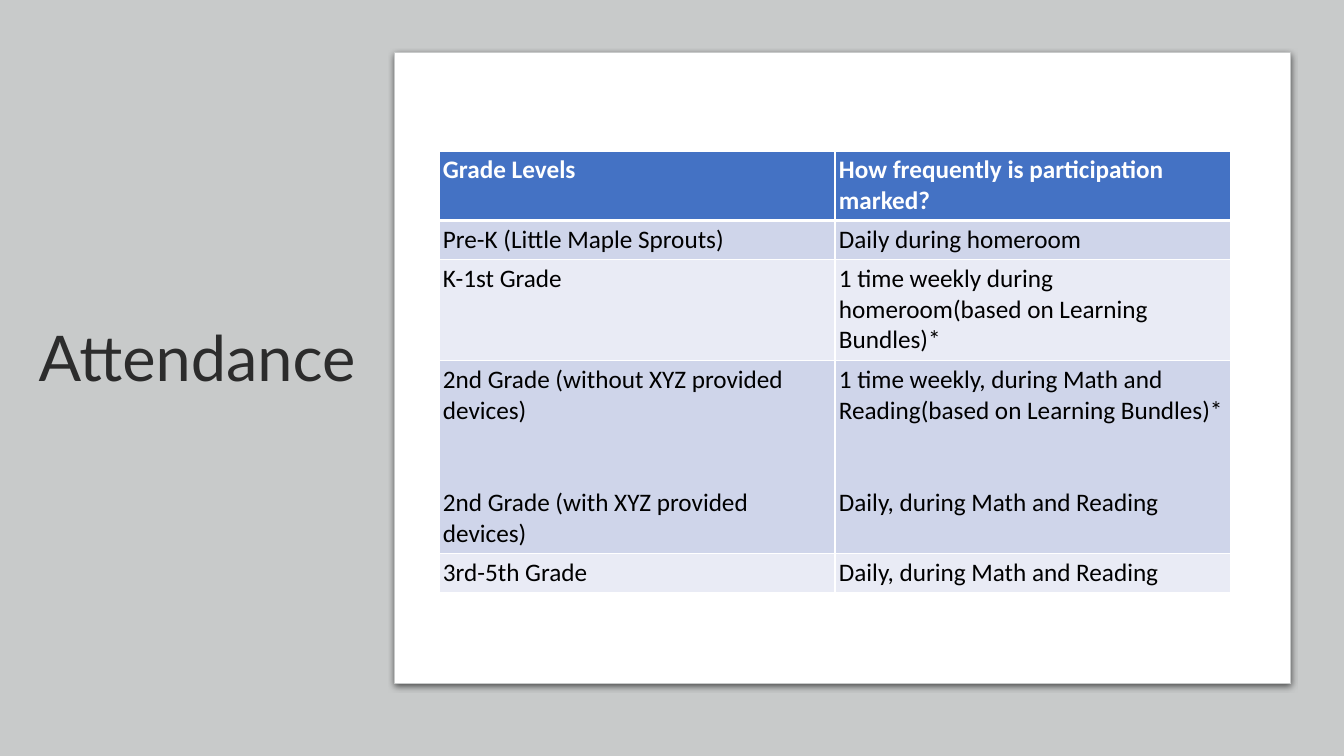
from dataclasses import dataclass

from lxml import etree
from pptx import Presentation
from pptx.dml.color import RGBColor
from pptx.enum.shapes import MSO_SHAPE
from pptx.enum.text import MSO_ANCHOR, MSO_AUTO_SIZE, PP_ALIGN
from pptx.oxml.ns import qn
from pptx.shapes.autoshape import Shape
from pptx.slide import Slide
from pptx.table import _Cell
from pptx.util import Emu, Pt

RECTANGLE, ROUNDED = MSO_SHAPE.RECTANGLE, MSO_SHAPE.ROUNDED_RECTANGLE
MIDDLE, CENTER, NO_AUTOFIT = MSO_ANCHOR.MIDDLE, PP_ALIGN.CENTER, MSO_AUTO_SIZE.NONE
TITLE_ONLY = 5
PX_PER_INCH = 100.8


@dataclass(frozen=True)
class Theme:
    background: str = "E7E6E6"
    backdrop: str = "C8CACA"
    panel: str = "FFFFFF"
    title: str = "2C2C2C"
    header: str = "4472C4"
    header_text: str = "FFFFFF"
    body_text: str = "000000"
    border: str = "FFFFFF"
    bands: tuple[str, str] = ("CFD5EA", "E9EBF5")
    title_font: str = "Lato"
    table_font: str = "Calibri"
    title_size: int = 45
    table_size: int = 18
    group_gap: int = 44
    thin_border: int = 1
    header_border: int = 3


@dataclass(frozen=True)
class Box:
    left: int
    top: int
    width: int
    height: int

    def emu(self) -> tuple[Emu, Emu, Emu, Emu]:
        return px(self.left), px(self.top), px(self.width), px(self.height)


@dataclass(frozen=True)
class AttendanceRow:
    """Each column holds one or more paragraphs."""
    height: int
    grades: tuple[str, ...]
    frequency: tuple[str, ...]


THEME = Theme()
SLIDE_BOX = Box(0, 0, 1344, 756)
TITLE_BOX = Box(0, 71, 394, 580)
PANEL_BOX = Box(395, 53, 896, 631)
TABLE_BOX = Box(439, 151, 792, 441)
CELL_MARGIN = 4

ROWS = (
    AttendanceRow(69, ("Grade Levels",), ("How frequently is participation marked?",)),
    AttendanceRow(39, ("Pre-K (Little Maple Sprouts)",), ("Daily during homeroom",)),
    AttendanceRow(101, ("K-1st Grade",),
                  ("1 time weekly during homeroom(based on Learning Bundles)*",)),
    AttendanceRow(193,
                  ("2nd Grade (without XYZ provided devices)",
                   "2nd Grade (with XYZ provided devices)"),
                  ("1 time weekly, during Math and Reading(based on Learning Bundles)*",
                   "Daily, during Math and Reading")),
    AttendanceRow(39, ("3rd-5th Grade",), ("Daily, during Math and Reading",)),
)


def px(length: int) -> Emu:
    return Emu(round(length * 914400 / PX_PER_INCH))


def color(value: str) -> RGBColor:
    return RGBColor.from_string(value)


def add_block(slide: Slide, kind: MSO_SHAPE, box: Box, fill: str) -> Shape:
    shape = slide.shapes.add_shape(kind, *box.emu())
    shape.shadow.inherit = False
    shape.fill.solid()
    shape.fill.fore_color.rgb = color(fill)
    shape.line.fill.background()
    return shape


def add_drop_shadow(shape: Shape) -> None:
    effects = shape.element.spPr.find(qn("a:effectLst"))
    shadow = etree.SubElement(effects, qn("a:outerShdw"), blurRad=str(Pt(4.5)),
                              dist=str(Pt(1.5)), dir="5400000", algn="t", rotWithShape="0")
    black = etree.SubElement(shadow, qn("a:srgbClr"), val="000000")
    etree.SubElement(black, qn("a:alpha"), val="63000")


def add_panel(slide: Slide) -> None:
    panel = add_block(slide, ROUNDED, PANEL_BOX, THEME.panel)
    panel.adjustments[0] = 0
    panel.line.color.rgb = color(THEME.backdrop)
    panel.line.width = Pt(0.75)
    add_drop_shadow(panel)


def format_title(title: Shape, text: str) -> None:
    title.left, title.top, title.width, title.height = TITLE_BOX.emu()
    frame = title.text_frame
    frame.text = text
    frame.word_wrap = True
    frame.auto_size = NO_AUTOFIT
    frame.vertical_anchor = MIDDLE
    paragraph = frame.paragraphs[0]
    paragraph.alignment = CENTER
    paragraph.line_spacing = 0.9
    paragraph.font.name = THEME.title_font
    paragraph.font.size = Pt(THEME.title_size)
    paragraph.font.color.rgb = color(THEME.title)


def set_borders(cell: _Cell, row_index: int) -> None:
    """Rule the cell thinly, with a thick line below the header row."""
    thick_side = {0: "B", 1: "T"}.get(row_index)
    properties = cell._tc.get_or_add_tcPr()
    for side in "LRTB":
        width = THEME.header_border if side == thick_side else THEME.thin_border
        line = etree.SubElement(properties, qn(f"a:ln{side}"), w=str(Pt(width)))
        fill = etree.SubElement(line, qn("a:solidFill"))
        etree.SubElement(fill, qn("a:srgbClr"), val=THEME.border)


def fill_cell(cell: _Cell, texts: tuple[str, ...], row_index: int) -> None:
    is_header = row_index == 0
    set_borders(cell, row_index)
    cell.fill.solid()
    cell.fill.fore_color.rgb = color(
        THEME.header if is_header else THEME.bands[(row_index - 1) % 2])
    cell.margin_left = cell.margin_right = px(CELL_MARGIN)
    cell.margin_top = cell.margin_bottom = px(CELL_MARGIN)
    cell.text = "\n".join(texts)
    for index, paragraph in enumerate(cell.text_frame.paragraphs):
        if index:
            paragraph.space_before = Pt(THEME.group_gap)
        paragraph.font.name = THEME.table_font
        paragraph.font.size = Pt(THEME.table_size)
        paragraph.font.bold = is_header
        paragraph.font.color.rgb = color(
            THEME.header_text if is_header else THEME.body_text)


def add_attendance_table(slide: Slide) -> None:
    table = slide.shapes.add_table(len(ROWS), 2, *TABLE_BOX.emu()).table
    for row_index, row in enumerate(ROWS):
        table.rows[row_index].height = px(row.height)
        for column_index, texts in enumerate((row.grades, row.frequency)):
            fill_cell(table.cell(row_index, column_index), texts, row_index)


def main() -> None:
    presentation = Presentation()
    presentation.slide_width = px(SLIDE_BOX.width)
    presentation.slide_height = px(SLIDE_BOX.height)
    slide = presentation.slides.add_slide(presentation.slide_layouts[TITLE_ONLY])
    slide.background.fill.solid()
    slide.background.fill.fore_color.rgb = color(THEME.background)

    title = slide.shapes.title
    format_title(title, "Attendance")
    backdrop = add_block(slide, RECTANGLE, SLIDE_BOX, THEME.backdrop)
    title.element.addprevious(backdrop.element)
    add_panel(slide)
    add_attendance_table(slide)
    presentation.save("out.pptx")


if __name__ == "__main__":
    main()
